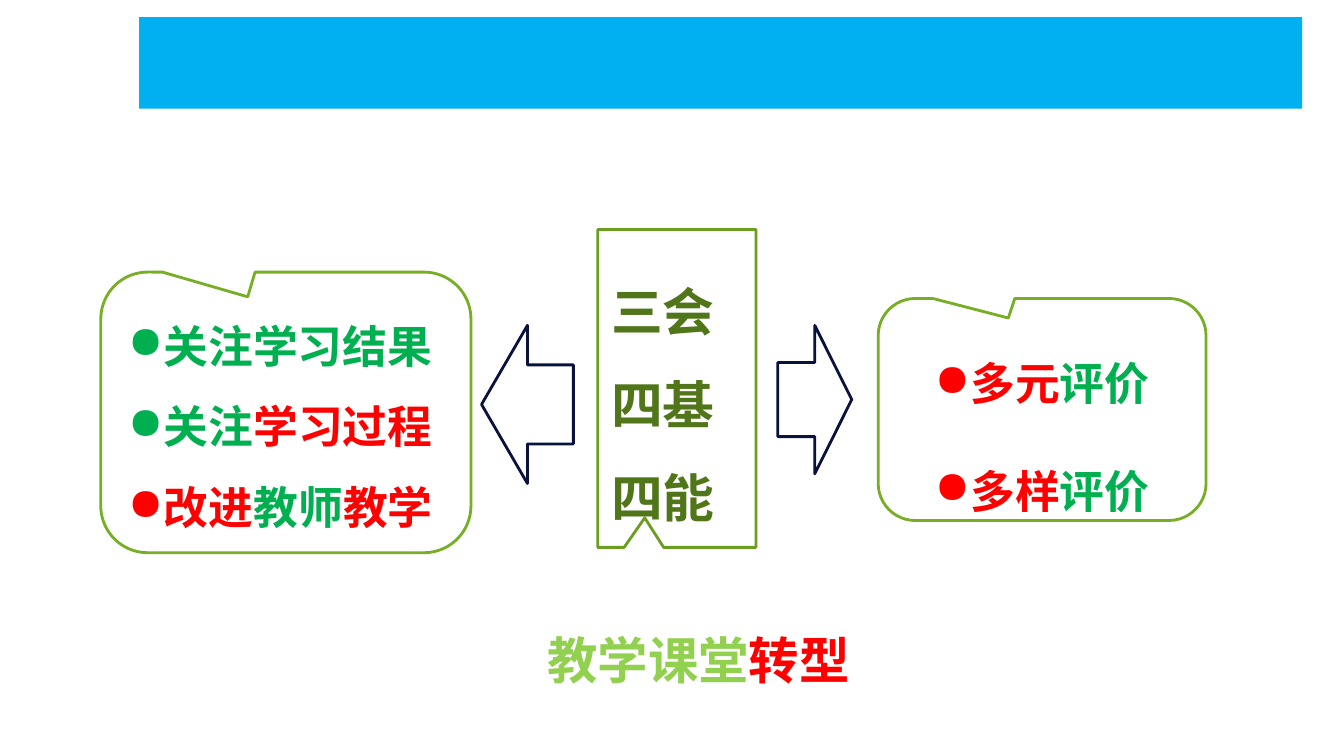
from dataclasses import dataclass

from lxml import etree
from pptx import Presentation
from pptx.dml.color import RGBColor
from pptx.enum.shapes import MSO_SHAPE
from pptx.enum.text import MSO_ANCHOR, PP_ALIGN
from pptx.oxml.ns import qn
from pptx.util import Pt

RECTANGLE = MSO_SHAPE.RECTANGLE
RIGHT_ARROW = MSO_SHAPE.RIGHT_ARROW
RECTANGLE_CALLOUT = MSO_SHAPE.RECTANGULAR_CALLOUT
ROUNDED_CALLOUT = MSO_SHAPE.ROUNDED_RECTANGULAR_CALLOUT
MIDDLE = MSO_ANCHOR.MIDDLE
LEFT = PP_ALIGN.LEFT
CENTER = PP_ALIGN.CENTER


@dataclass(frozen=True)
class Theme:
    white: str = "FFFFFF"
    banner: str = "00B0F0"
    core_line: str = "6B9D21"
    core_text: str = "507619"
    arrow_line: str = "08123D"
    panel_line: str = "77AE26"
    red: str = "FF0000"
    green: str = "00B050"
    light_green: str = "92D050"
    font: str = "Noto Sans CJK SC"
    caption_font: str = "Noto Sans CJK JP"
    core_size: int = 37
    panel_size: int = 32
    caption_size: int = 36
    line_width: int = 2


THEME = Theme()
ROUNDED_ADJUSTMENTS = (-0.103, -0.412, 0.167)


def add_block(slide, kind, box, line=None, adjustments=(), fill=THEME.white):
    shape = slide.shapes.add_shape(kind, *(Pt(length) for length in box))
    shape.shadow.inherit = False
    shape.fill.solid()
    shape.fill.fore_color.rgb = RGBColor.from_string(fill)
    if line:
        shape.line.color.rgb = RGBColor.from_string(line)
        shape.line.width = Pt(THEME.line_width)
    else:
        shape.line.fill.background()
    for index, value in enumerate(adjustments):
        shape.adjustments[index] = value
    return shape


def add_run(paragraph, text, color, size, font):
    run = paragraph.add_run()
    run.text = text
    run.font.size = Pt(size)
    run.font.bold = True
    run.font.color.rgb = RGBColor.from_string(color)
    run.font.name = font
    east_asian = etree.Element(qn("a:ea"), typeface=font)
    run.font._element.find(qn("a:latin")).addnext(east_asian)


def add_bullet(paragraph):
    properties = paragraph._p.get_or_add_pPr()
    properties.set("marL", "0")
    properties.set("indent", "0")
    etree.SubElement(properties, qn("a:buChar"), char="●")


def write_lines(shape, lines, size, spacing=1, alignment=LEFT, bulleted=False, font=THEME.font):
    frame = shape.text_frame
    for index, runs in enumerate(lines):
        paragraph = frame.add_paragraph() if index else frame.paragraphs[0]
        if bulleted:
            add_bullet(paragraph)
        paragraph.alignment = alignment
        paragraph.line_spacing = spacing
        for text, color in runs:
            add_run(paragraph, text, color, size, font)


def add_callout(slide, kind, box, line, adjustments, lines, size, **style):
    callout = add_block(slide, kind, box, line, adjustments)
    frame = callout.text_frame
    frame.word_wrap = True
    frame.vertical_anchor = MIDDLE
    frame.margin_left = frame.margin_right = Pt(9.6)
    frame.margin_top = frame.margin_bottom = Pt(4.8)
    write_lines(callout, lines, size, **style)


def add_panel(slide, box, lines, **style):
    add_callout(slide, ROUNDED_CALLOUT, box, THEME.panel_line, ROUNDED_ADJUSTMENTS,
                lines, THEME.panel_size, bulleted=True, **style)


def add_arrow(slide, box, mirrored=False):
    arrow = add_block(slide, RIGHT_ARROW, box, THEME.arrow_line)
    if mirrored:
        arrow._element.spPr.find(qn("a:xfrm")).set("flipH", "1")


def add_caption(slide, box, runs):
    caption = slide.shapes.add_textbox(*(Pt(length) for length in box))
    caption.text_frame.word_wrap = False
    write_lines(caption, [runs], THEME.caption_size, font=THEME.caption_font)


def main():
    presentation = Presentation()
    presentation.slide_width = Pt(960)
    presentation.slide_height = Pt(540)
    slide = presentation.slides.add_slide(presentation.slide_layouts[6])
    red, green = THEME.red, THEME.green

    add_block(slide, RECTANGLE, (90.7, 12.2, 839.5, 65.5), fill=THEME.banner)
    add_block(slide, RECTANGLE, (30.2, 12.2, 69.1, 69.8))

    add_callout(slide, RECTANGLE_CALLOUT, (427, 164, 113, 227), THEME.core_line, (-0.203, 0.407),
                [[(text, THEME.core_text)] for text in ("三会", "四基", "四能")],
                THEME.core_size, spacing=1.5)
    add_arrow(slide, (555.6, 232.4, 52.8, 106))
    add_arrow(slide, (344, 232.4, 65.6, 113), mirrored=True)

    add_panel(slide, (627.3, 213.2, 234.2, 158.6), [
        [("多元", red), ("评价", green)],
        [("多样", red), ("评价", green)],
    ], spacing=2, alignment=CENTER)
    add_panel(slide, (72, 194.4, 264.4, 200.4), [
        [("关注学习结果", green)],
        [("关注", green), ("学习过程", red)],
        [("改进", red), ("教师", green), ("教学", red)],
    ], spacing=1.5)

    add_caption(slide, (383.8, 445.7, 232.6, 51.1),
                [("教学课堂", THEME.light_green), ("转型", red)])
    presentation.save("out.pptx")


if __name__ == "__main__":
    main()
